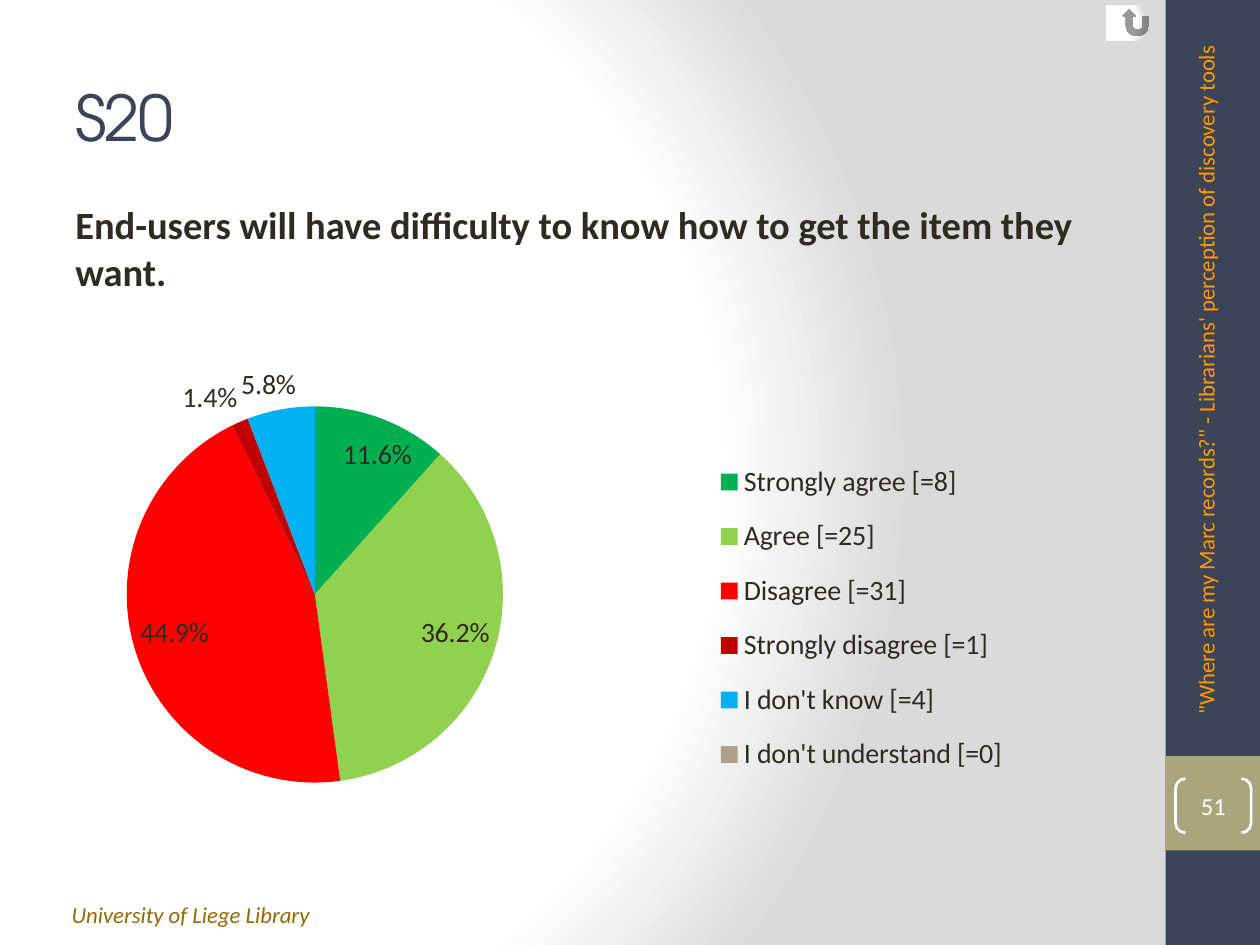
import pptx
import pptx.chart.data
import pptx.dml.color
import pptx.enum.chart
import pptx.enum.shapes
import pptx.enum.text
import pptx.oxml
import pptx.oxml.ns
import pptx.util

Inches, Pt = pptx.util.Inches, pptx.util.Pt
RGB = pptx.dml.color.RGBColor.from_string
SHAPE = pptx.enum.shapes.MSO_SHAPE
ANCHOR = pptx.enum.text.MSO_ANCHOR
qn, nsdecls = pptx.oxml.ns.qn, pptx.oxml.ns.nsdecls

COLORS = {
    "navy": "3C4457", "olive": "A9A57C", "gold": "956803", "orange": "FF9900",
    "text": "2F2B20", "white": "FFFFFF", "grey": "DADADA",
}


def radial_fill(fill, parent):
    """Give a background or shape the white to grey radial gradient."""
    fill.solid()
    stops = "".join(
        f'<a:gs pos="{pos}"><a:srgbClr val="{COLORS[name]}"/></a:gs>'
        for pos, name in [(0, "white"), (75000, "white"), (100000, "grey")])
    grad = pptx.oxml.parse_xml(
        f'<a:gradFill {nsdecls("a")} rotWithShape="1"><a:gsLst>{stops}</a:gsLst>'
        '<a:path path="circle">'
        '<a:fillToRect l="20000" t="50000" r="100000" b="50000"/>'
        '</a:path></a:gradFill>')
    parent.replace(parent.find(qn("a:solidFill")), grad)


def add_text(s, box, text, size, color, font="Calibri", anchor=ANCHOR.TOP):
    sp = s.shapes.add_textbox(*map(Inches, box))
    tf = sp.text_frame
    tf.word_wrap = True
    tf.vertical_anchor = anchor
    tf.text = text
    r = tf.paragraphs[0].runs[0]
    r.font.size = Pt(size)
    r.font.name = font
    r.font.color.rgb = RGB(COLORS[color])
    return sp, r


prs = pptx.Presentation()
prs.slide_width, prs.slide_height = Inches(10), Inches(7.5)
s = prs.slides.add_slide(prs.slide_layouts[6])

# Background
radial_fill(s.background.fill, s.background._cSld.bg.bgPr)

# Side bar and page number block
for top, height, color in [(0, 7.5, "navy"), (6, 0.75, "olive")]:
    sp = s.shapes.add_shape(SHAPE.RECTANGLE, Inches(9.25), Inches(top),
                            Inches(0.75), Inches(height))
    sp.shadow.inherit = False
    sp.fill.solid()
    sp.fill.fore_color.rgb = RGB(COLORS[color])
    sp.line.fill.background()

# Footer, title and statement
sp, r = add_text(s, (0.47, 7.1, 5.32, 0.32), "University of Liege Library", 13, "gold")
r.font.italic = True

sp, r = add_text(s, (0.5, 0.3, 8.33, 1.25), "S20", 36, "navy",
                 "TeX Gyre Adventor", ANCHOR.MIDDLE)
r.font._element.set("spc", "-100")

sp, r = add_text(
    s, (0.5, 1.55, 8.33, 1),
    "End-users will have difficulty to know how to get the item they want.",
    22, "text")
r.font.bold = True

# Page number in brackets
sp = s.shapes.add_shape(SHAPE.DOUBLE_BRACKET, Inches(9.33), Inches(6.18),
                        Inches(0.6), Inches(0.43))
sp.adjustments[0] = 0.18
sp.shadow.inherit = False
sp.fill.background()
sp.line.color.rgb = RGB(COLORS["white"])
sp.line.width = Pt(1.5)
tf = sp.text_frame
tf.margin_left = tf.margin_right = tf.margin_top = tf.margin_bottom = 0
tf.vertical_anchor = ANCHOR.MIDDLE
tf.text = "51"
p = tf.paragraphs[0]
p.alignment = pptx.enum.text.PP_ALIGN.CENTER
r = p.runs[0]
r.font.size = Pt(14)
r.font.name = "Calibri"
r.font.color.rgb = RGB(COLORS["white"])

# Talk title running up the side bar
sp, r = add_text(
    s, (6.83, 2.79, 5.56, 0.4),
    "\"Where are my Marc records?\" - Librarians' perception of discovery tools",
    13, "orange")
sp.rotation = 270

# Pie chart of answers
answers = [
    ("Strongly agree [=8]", 0.116, "00B050"),
    ("Agree [=25]", 0.362, "92D050"),
    ("Disagree [=31]", 0.449, "FF0000"),
    ("Strongly disagree [=1]", 0.014, "C00000"),
    ("I don't know [=4]", 0.058, "00B0F0"),
    ("I don't understand [=0]", 0, "B1A089"),
]
data = pptx.chart.data.CategoryChartData(number_format="0.0%")
data.categories = [name for name, value, color in answers]
data.add_series("Series 1", [value for name, value, color in answers])
chart = s.shapes.add_chart(pptx.enum.chart.XL_CHART_TYPE.PIE, Inches(0.35),
                           Inches(2.81), Inches(8.11), Inches(3.78), data).chart
chart.has_title = False
chart.font.size = Pt(16)
chart.font.name = "Calibri"
chart.font.color.rgb = RGB(COLORS["text"])

plot = chart.plots[0]
plot.vary_by_categories = True
for i, (name, value, color) in enumerate(answers):
    fill = plot.series[0].points[i].format.fill
    fill.solid()
    fill.fore_color.rgb = RGB(color)

labels = plot.series[0].data_labels
labels.show_value = True
labels.number_format = "0.0%"
labels.number_format_is_linked = False
labels.position = pptx.enum.chart.XL_LABEL_POSITION.BEST_FIT
labels.font.size = Pt(16)
# The empty answer carries no label
labels._element.insert(0, pptx.oxml.parse_xml(
    f'<c:dLbl {nsdecls("c")}><c:idx val="5"/><c:delete val="1"/></c:dLbl>'))

chart.has_legend = True
legend = chart.legend
legend.position = pptx.enum.chart.XL_LEGEND_POSITION.RIGHT
legend.include_in_layout = False
legend.font.size = Pt(16)

# Fixed places of the pie and the legend inside the chart
plot_area = chart._chartSpace.chart.plotArea
for owner, target, (x, y, w, h) in [
        (plot_area, '<c:layoutTarget val="inner"/>', (0.08, 0.11, 0.37, 0.79)),
        (legend._element, "", (0.63, 0.19, 0.34, 0.73))]:
    for old in owner.findall(qn("c:layout")):
        owner.remove(old)
    layout = pptx.oxml.parse_xml(
        f'<c:layout {nsdecls("c")}><c:manualLayout>{target}'
        '<c:xMode val="edge"/><c:yMode val="edge"/>'
        f'<c:x val="{x}"/><c:y val="{y}"/><c:w val="{w}"/><c:h val="{h}"/>'
        '</c:manualLayout></c:layout>')
    owner.insert(0 if owner is plot_area else 1, layout)

# Return button
sp = s.shapes.add_shape(SHAPE.ACTION_BUTTON_RETURN, Inches(8.78), Inches(0.04),
                        Inches(0.47), Inches(0.28))
sp.shadow.inherit = False
radial_fill(sp.fill, sp._element.spPr)
sp.line.fill.background()
sp._element.spPr.find(qn("a:xfrm")).set("flipH", "1")

prs.save("out.pptx")
